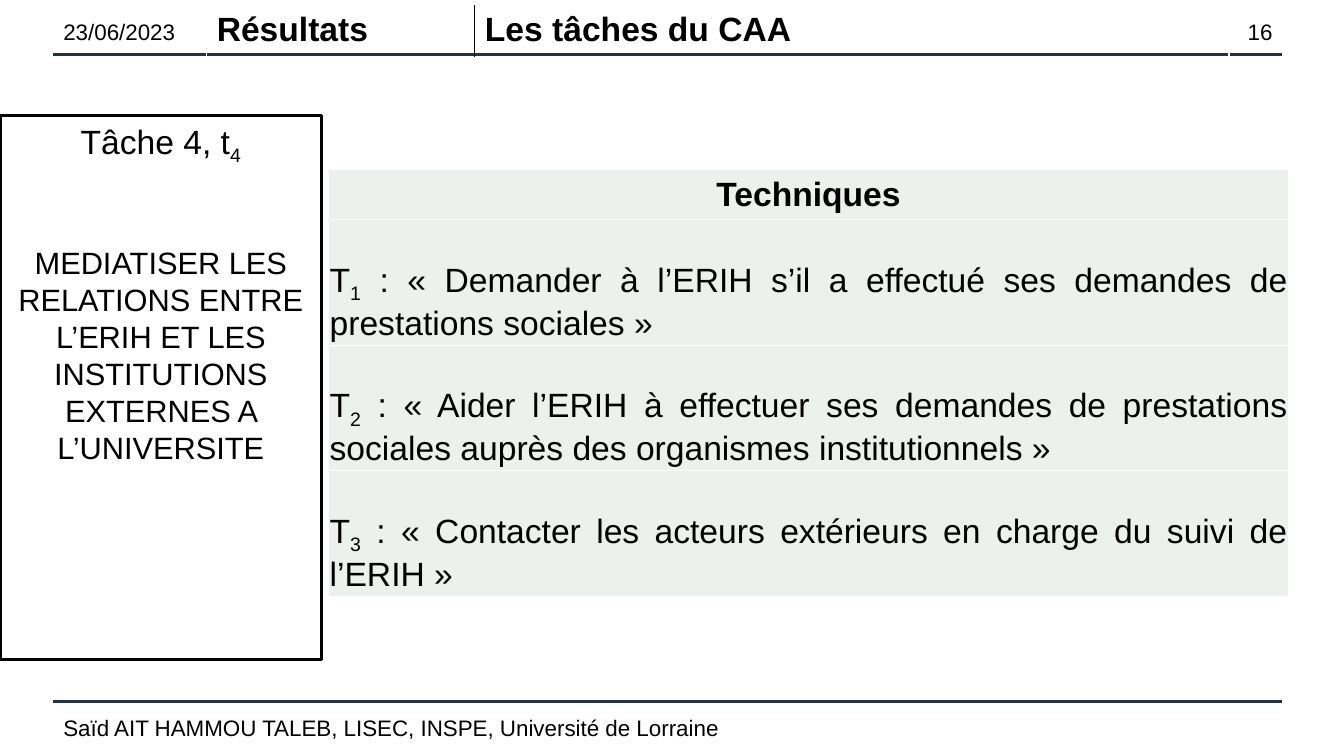
"""Build the slide on task 4 of the CAA and its techniques."""
from lxml.etree import SubElement
from pptx import Presentation
from pptx.dml.color import RGBColor
from pptx.enum.shapes import MSO_CONNECTOR, MSO_SHAPE
from pptx.enum.text import MSO_ANCHOR, PP_ALIGN
from pptx.oxml.ns import qn
from pptx.util import Pt

PX = 9144
THEME = {
    "font": "Arial", "ink": "000000", "rule": "243341", "paper": "FFFFFF", "band": "ECF1ED",
    "small": 16, "task": 22, "body": 24, "rule_width": 2.25, "border_width": 1,
}


def write(frame, text, size=THEME["body"], bold=False, align=PP_ALIGN.LEFT,
          anchor=MSO_ANCHOR.TOP, before=0):
    """Add a paragraph; parts between underscores are subscripts."""
    frame.word_wrap = True
    frame.vertical_anchor = anchor
    paragraph = frame.add_paragraph() if frame.text else frame.paragraphs[0]
    paragraph.alignment = align
    paragraph.space_before = Pt(before)
    for position, part in enumerate(text.split("_")):
        run = paragraph.add_run()
        run.text = part
        run.font.name = THEME["font"]
        run.font.size = Pt(size)
        run.font.bold = bold
        run.font.color.rgb = RGBColor.from_string(THEME["ink"])
        if position % 2:
            run._r.get_or_add_rPr().set("baseline", "-25000")


def style_cell(cell, sides, border, fill=None):
    """Draw the given cell borders, then set the fill."""
    properties = cell._tc.get_or_add_tcPr()
    for side in sides:
        edge = SubElement(properties, qn(f"a:ln{side}"), w=str(Pt(THEME["border_width"])))
        SubElement(SubElement(edge, qn("a:solidFill")), qn("a:srgbClr"), val=border)
    if fill:
        cell.fill.solid()
        cell.fill.fore_color.rgb = RGBColor.from_string(fill)
    else:
        cell.fill.background()


deck = Presentation()
deck.slide_width, deck.slide_height = 1333 * PX, 750 * PX
slide = deck.slides.add_slide(deck.slide_layouts[6])
shapes = slide.shapes

for rule_y in (54, 696):
    rule = shapes.add_connector(MSO_CONNECTOR.STRAIGHT, 53 * PX, rule_y * PX, 1272 * PX, rule_y * PX)
    rule.line.color.rgb = RGBColor.from_string(THEME["rule"])
    rule.line.width = Pt(THEME["rule_width"])
    SubElement(rule._element.spPr, qn("a:effectLst"))

for left, top, width, label, align in (
    (53, 11, 300, "23/06/2023", PP_ALIGN.LEFT),
    (53, 702, 1149, "Saïd AIT HAMMOU TALEB, LISEC, INSPE, Université de Lorraine", PP_ALIGN.LEFT),
    (1202, 11, 70, "16", PP_ALIGN.RIGHT),
):
    margin_note = shapes.add_textbox(left * PX, top * PX, width * PX, 40 * PX)
    write(margin_note.text_frame, label, size=THEME["small"], align=align, anchor=MSO_ANCHOR.MIDDLE)

heading = shapes.add_table(1, 2, 205 * PX, 6 * PX, 1014 * PX, 46 * PX).table
heading.first_row = heading.horz_banding = False
for column, (width, side, label) in enumerate(
    ((266, "R", "Résultats"), (748, "L", "Les tâches du CAA"))
):
    heading.columns[column].width = width * PX
    cell = heading.cell(0, column)
    write(cell.text_frame, label, bold=True)
    style_cell(cell, side, THEME["ink"])

task = shapes.add_shape(MSO_SHAPE.RECTANGLE, 0, 115 * PX, 319 * PX, 539 * PX)
task.shadow.inherit = False
task.fill.background()
task.line.color.rgb = RGBColor.from_string(THEME["ink"])
task.line.width = Pt(THEME["rule_width"])
write(task.text_frame, "Tâche 4, t_4_", align=PP_ALIGN.CENTER)
write(task.text_frame,
      "MEDIATISER LES RELATIONS ENTRE L’ERIH ET LES INSTITUTIONS EXTERNES A L’UNIVERSITE",
      size=THEME["task"], align=PP_ALIGN.CENTER, before=55)

techniques = (
    "Techniques",
    "T_1_ : « Demander à l’ERIH s’il a effectué ses demandes de prestations sociales »",
    "T_2_ : « Aider l’ERIH à effectuer ses demandes de prestations sociales auprès des organismes institutionnels »",
    "T_3_ : « Contacter les acteurs extérieurs en charge du suivi de l’ERIH »",
)
technique_table = shapes.add_table(len(techniques), 1, 326 * PX, 168 * PX, 952 * PX, 401 * PX).table
technique_table.horz_banding = False
for row, technique in enumerate(techniques):
    is_header = row == 0
    technique_table.rows[row].height = (50 if is_header else 117) * PX
    cell = technique_table.cell(row, 0)
    cell.margin_left = cell.margin_right = PX
    cell.margin_top = (1 if is_header else 39) * PX
    cell.margin_bottom = 0
    write(cell.text_frame, technique, bold=is_header,
          align=PP_ALIGN.CENTER if is_header else PP_ALIGN.JUSTIFY)
    cell.vertical_anchor = MSO_ANCHOR.MIDDLE
    style_cell(cell, "LRTB", THEME["paper"], THEME["band"])

deck.save("out.pptx")
